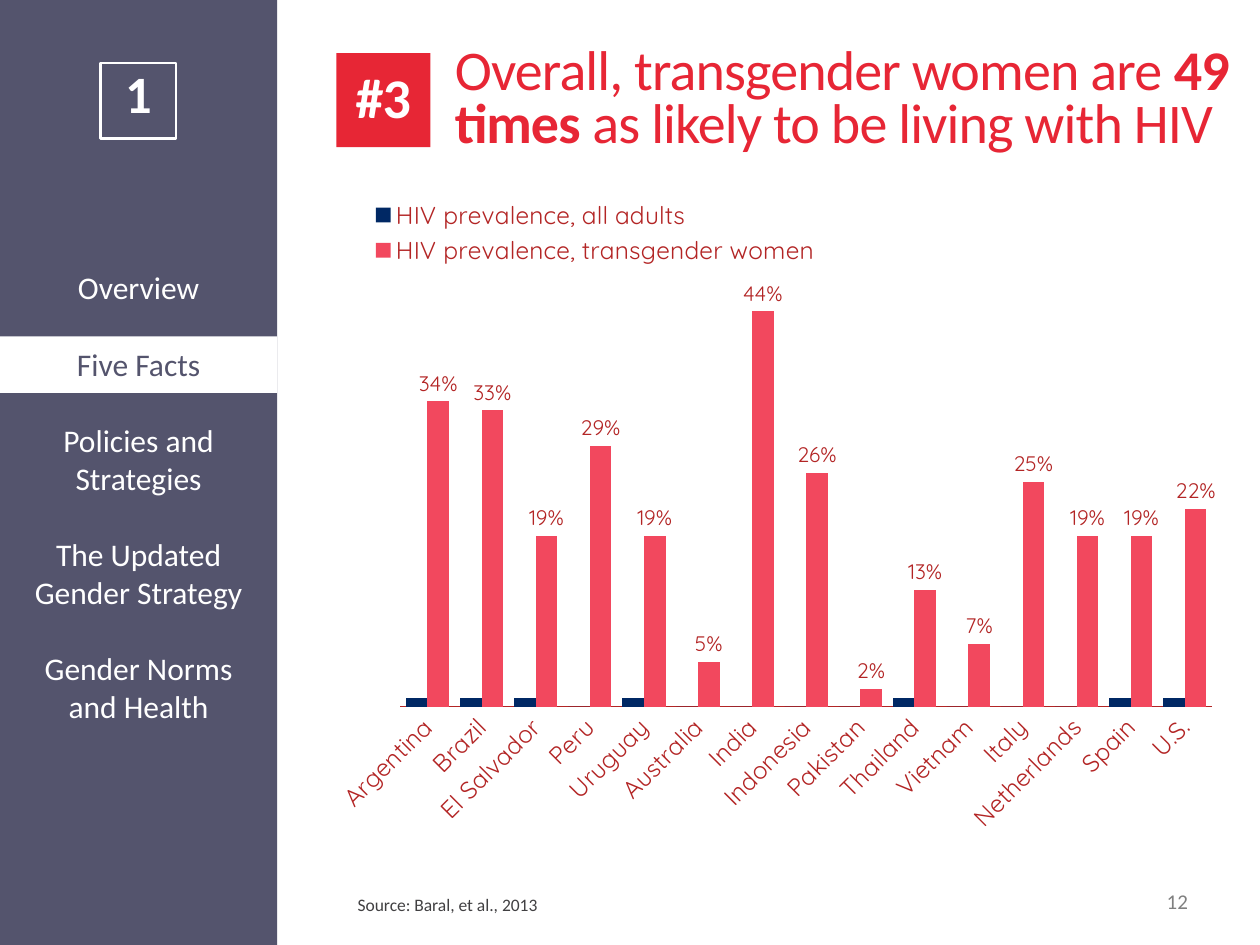
from lxml.etree import SubElement
from pptx import Presentation
from pptx.chart.data import CategoryChartData
from pptx.dml.color import RGBColor
from pptx.enum.chart import (XL_CHART_TYPE, XL_LABEL_POSITION,
                             XL_LEGEND_POSITION, XL_TICK_LABEL_POSITION,
                             XL_TICK_MARK)
from pptx.enum.shapes import MSO_SHAPE
from pptx.enum.text import MSO_ANCHOR, PP_ALIGN
from pptx.oxml.ns import qn
from pptx.util import Cm, Pt

SLATE = RGBColor(0x54, 0x54, 0x6D)
WHITE = RGBColor(0xFF, 0xFF, 0xFF)
RED = RGBColor(0xE7, 0x26, 0x35)
NAVY = RGBColor(0x00, 0x28, 0x64)
PINK = RGBColor(0xF2, 0x48, 0x5E)
BRICK = RGBColor(0xB3, 0x25, 0x25)
DARK = RGBColor(0x41, 0x40, 0x42)
GREY = RGBColor(0x80, 0x80, 0x80)

NAMES = ["Argentina", "Brazil", "El Salvador", "Peru", "Uruguay",
         "Australia", "India", "Indonesia", "Pakistan", "Thailand",
         "Vietnam", "Italy", "Netherlands", "Spain", "U.S."]
ADULTS = [0.01, 0.01, 0.01, 0, 0.01, 0, 0, 0, 0, 0.01, 0, 0, 0, 0.01, 0.01]
TRANS = [0.34, 0.33, 0.19, 0.29, 0.19, 0.05, 0.44, 0.26, 0.02, 0.13,
         0.07, 0.25, 0.19, 0.19, 0.22]


class Deck:
    body = "Calibri"
    label = "Quicksand"

    def __init__(self):
        self.prs = Presentation()
        self.prs.slide_width, self.prs.slide_height = Cm(25.4), Cm(19.05)
        self.slide = self.prs.slides.add_slide(self.prs.slide_layouts[6])

    def rect(self, at, fill=None, line=None):
        box = self.slide.shapes.add_shape(MSO_SHAPE.RECTANGLE, *map(Cm, at))
        box.shadow.inherit = False
        if fill is None:
            box.fill.background()
        else:
            box.fill.solid()
            box.fill.fore_color.rgb = fill
        if line is None:
            box.line.fill.background()
        else:
            box.line.color.rgb = line
            box.line.width = Pt(1.5)
        return box

    def text(self, at, anchor=MSO_ANCHOR.MIDDLE, wrap=True):
        box = self.slide.shapes.add_textbox(*map(Cm, at))
        box.text_frame.word_wrap = wrap
        box.text_frame.vertical_anchor = anchor
        return box

    def para(self, box, align=PP_ALIGN.LEFT, space=None, before=0):
        frame = box.text_frame
        para = frame.paragraphs[0]
        if para.runs:
            para = frame.add_paragraph()
        para.alignment = align
        para.space_before = Pt(before)
        if space:
            para.line_spacing = space
        return para

    def run(self, para, text, size, color, bold=False, track=0):
        run = para.add_run()
        run.text = text
        self.style(run.font, size, color, self.body)
        run.font.bold = bold
        if track:
            run.font._element.set("spc", str(track))

    def style(self, font, size, color, name):
        font.size, font.name = Pt(size), name
        font.color.rgb = color

    def place(self, part, index, spots, inner=False):
        """Fix a chart part at x, y, w, h as shares of the chart."""
        for old in part.findall(qn("c:layout")):
            part.remove(old)
        layout = SubElement(part, qn("c:layout"))
        part.insert(index, layout)
        manual = SubElement(layout, qn("c:manualLayout"))
        pairs = [("layoutTarget", "inner")] if inner else []
        pairs += [("xMode", "edge"), ("yMode", "edge")]
        pairs += zip("xywh", spots)
        for tag, val in pairs:
            SubElement(manual, qn("c:" + tag)).set("val", str(val))

    def chart(self, at, names, series, colors):
        data = CategoryChartData(number_format="0%")
        data.categories = names
        for title, vals in series:
            data.add_series(title, vals)
        chart = self.slide.shapes.add_chart(
            XL_CHART_TYPE.COLUMN_CLUSTERED, *map(Cm, at), data).chart
        self.style(chart.font, 16, BRICK, self.body)
        chart.has_title = False

        # Bars
        plot = chart.plots[0]
        plot.gap_width, plot.overlap = 50, 0
        plot.vary_by_categories = False
        for ser, color in zip(plot.series, colors):
            ser.format.fill.solid()
            ser.format.fill.fore_color.rgb = color
        tags = plot.series[-1].data_labels
        tags.show_value = True
        tags.position = XL_LABEL_POSITION.OUTSIDE_END
        tags.number_format, tags.number_format_is_linked = "0%", False
        self.style(tags.font, 12, BRICK, self.label)

        # Axes
        cat, val = chart.category_axis, chart.value_axis
        for axis in (cat, val):
            axis.major_tick_mark = axis.minor_tick_mark = XL_TICK_MARK.NONE
            axis.has_major_gridlines = False
        cat.format.line.color.rgb = BRICK
        cat.format.line.width = Pt(0.75)
        self.style(cat.tick_labels.font, 14, BRICK, self.label)
        turn = cat._element.find(qn("c:txPr")).find(qn("a:bodyPr"))
        turn.set("rot", "-2700000")
        val.minimum_scale, val.maximum_scale = 0, 0.5
        val.tick_label_position = XL_TICK_LABEL_POSITION.NONE
        val.format.line.fill.background()

        # Legend and plot area
        chart.has_legend = True
        key = chart.legend
        key.position = XL_LEGEND_POSITION.RIGHT
        key.include_in_layout = False
        self.style(key.font, 14, BRICK, self.label)
        self.place(key._element, 1, (0.02, 0.01, 0.55, 0.11))
        area = chart._chartSpace.chart.plotArea
        self.place(area, 0, (0.073, 0.102, 0.924, 0.669), inner=True)


def main():
    deck = Deck()
    mid = PP_ALIGN.CENTER

    # Sidebar
    deck.rect((0, 0, 5.59, 19.05), SLATE)
    box = deck.rect((2.03, 1.27, 1.52, 1.52), line=WHITE)
    deck.run(deck.para(box, mid, 0.7), "1", 30, WHITE, True)
    deck.rect((0, 6.78, 5.59, 1.14), WHITE)
    menu = deck.text((0, 5.31, 5.59, 9.4))
    for item, color, gap in [("Overview", WHITE, 0),
                             ("Five Facts", SLATE, 22),
                             ("Policies and Strategies", WHITE, 22),
                             ("The Updated Gender Strategy", WHITE, 22),
                             ("Gender Norms", WHITE, 22),
                             ("and Health", WHITE, 0)]:
        deck.run(deck.para(menu, mid, before=gap), item, 18, color)

    # Source
    note = deck.text((6.96, 17.88, 4.22, 0.69), wrap=False)
    deck.run(deck.para(note), "Source: Baral, et al., 2013", 10, DARK)

    # Chart
    deck.chart((6.78, 3.81, 17.73, 13.54), NAMES,
               [("HIV prevalence, all adults", ADULTS),
                ("HIV prevalence, transgender women", TRANS)],
               [NAVY, PINK])

    # Heading
    badge = deck.rect((6.78, 1.07, 1.9, 1.9), RED)
    badge.text_frame.word_wrap = False
    deck.run(deck.para(badge, mid, 0.9), "#3", 32, WHITE, True, -50)
    head = deck.para(deck.text((8.92, 0.89, 16.2, 2.29)), space=0.8)
    for words, bold in [("Overall, transgender women are ", False),
                        ("49 times ", True),
                        ("as likely to be living with HIV", False)]:
        deck.run(head, words, 32, RED, bold, -50)

    # Page number
    page = deck.text((23.27, 17.78, 2.13, 0.76), MSO_ANCHOR.TOP)
    deck.run(deck.para(page), "12", 12, GREY)

    deck.prs.save("out.pptx")


if __name__ == "__main__":
    main()
